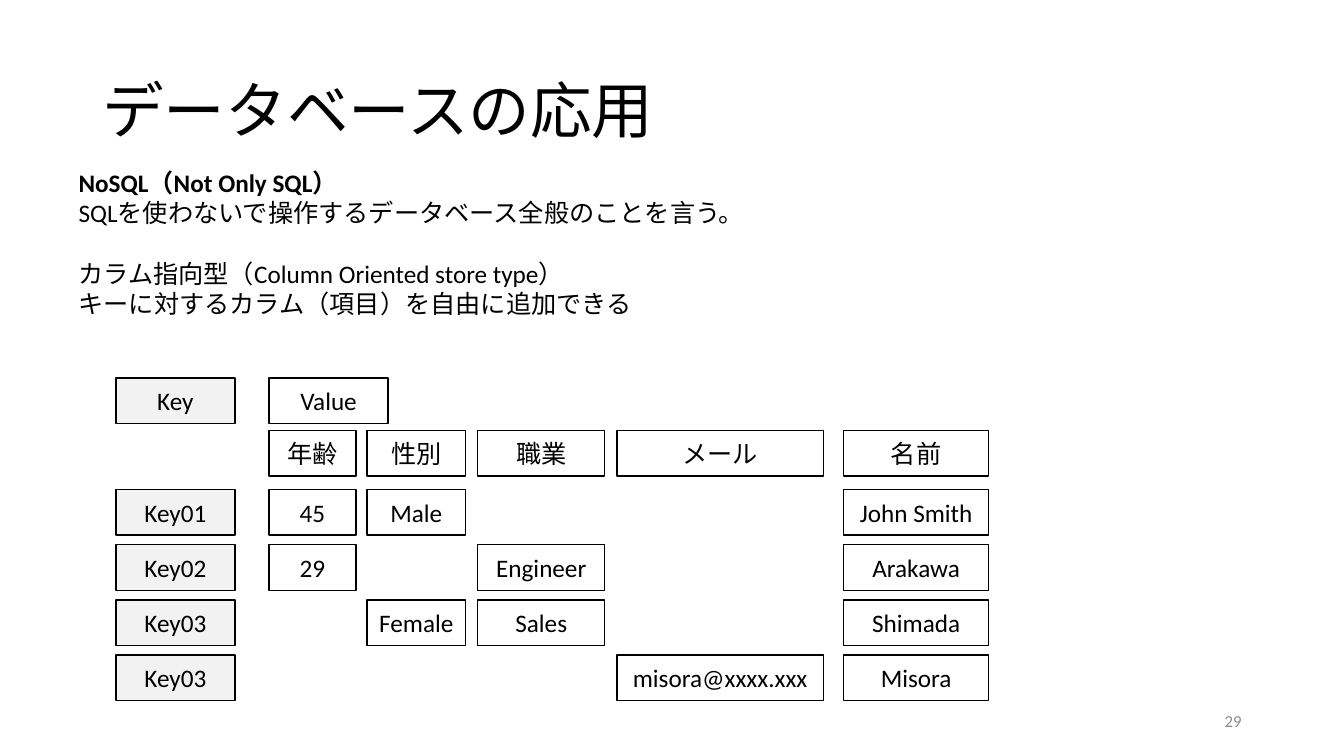
"""Build a slide on column-oriented NoSQL stores."""
import pptx
import pptx.dml.color
import pptx.enum.shapes
import pptx.enum.text
import pptx.util
from dataclasses import dataclass

Pt = pptx.util.Pt
Align = pptx.enum.text.PP_ALIGN
Anchor = pptx.enum.text.MSO_ANCHOR


@dataclass
class Theme:
    font: str = "Calibri"
    ink: str = "000000"
    muted: str = "8C8C8C"
    key_fill: str = "F2F2F2"
    value_fill: str = "FFFFFF"
    title_size: int = 44
    body_size: int = 18
    number_size: int = 12


theme = Theme()


def write(frame, text, *, size=theme.body_size, color=theme.ink, bold=False,
          align=Align.LEFT, anchor=Anchor.MIDDLE, line_spacing=None, gap_before=None):
    frame.word_wrap = True
    frame.vertical_anchor = anchor
    para = frame.add_paragraph() if frame.text else frame.paragraphs[0]
    para.alignment = align
    if line_spacing:
        para.line_spacing = line_spacing
    if gap_before:
        para.space_before = Pt(gap_before)
    span = para.add_run()
    span.text = text
    span.font.name = theme.font
    span.font.size = Pt(size)
    span.font.bold = bold
    span.font.color.rgb = pptx.dml.color.RGBColor.from_string(color)


def add_cell(page, text, left, top, width, fill):
    box = page.shapes.add_shape(pptx.enum.shapes.MSO_SHAPE.RECTANGLE,
                                Pt(left), Pt(top), Pt(width), Pt(32.6))
    box.shadow.inherit = False
    box.fill.solid()
    box.fill.fore_color.rgb = pptx.dml.color.RGBColor.from_string(fill)
    box.line.color.rgb = pptx.dml.color.RGBColor.from_string(theme.ink)
    box.line.width = Pt(1)
    write(box.text_frame, text, align=Align.CENTER)


deck = pptx.Presentation()
deck.slide_width, deck.slide_height = Pt(960), Pt(540)
page = deck.slides.add_slide(deck.slide_layouts[6])

title = page.shapes.add_textbox(Pt(66), Pt(28.8), Pt(828), Pt(104.4))
write(title.text_frame, "データベースの応用", size=theme.title_size, line_spacing=0.9)

number = page.shapes.add_textbox(Pt(678), Pt(500.5), Pt(216), Pt(28.8))
write(number.text_frame, "29", size=theme.number_size, color=theme.muted, align=Align.RIGHT)

body = page.shapes.add_textbox(Pt(49), Pt(115.9), Pt(863.3), Pt(116.6))
body_lines = [
    ("NoSQL（Not Only SQL）", True, None),
    ("SQLを使わないで操作するデータベース全般のことを言う。", False, None),
    ("カラム指向型（Column Oriented store type）", False, 22),
    ("キーに対するカラム（項目）を自由に追加できる", False, None),
]
for text, bold, gap in body_lines:
    write(body.text_frame, text, bold=bold, gap_before=gap, anchor=Anchor.TOP)

key_left, key_width = 82.8, 85
columns = [
    ("年齢", 192.2, 62),
    ("性別", 262.1, 70.6),
    ("職業", 341.3, 90.7),
    ("メール", 440.6, 147.6),
    ("名前", 602.6, 103.7),
]
records = [
    ("Key01", {"年齢": "45", "性別": "Male", "名前": "John Smith"}),
    ("Key02", {"年齢": "29", "職業": "Engineer", "名前": "Arakawa"}),
    ("Key03", {"性別": "Female", "職業": "Sales", "名前": "Shimada"}),
    ("Key03", {"メール": "misora@xxxx.xxx", "名前": "Misora"}),
]
legend_top, header_top, record_top, record_pitch = 270, 307.4, 349.7, 39.4

add_cell(page, "Key", key_left, legend_top, key_width, theme.key_fill)
add_cell(page, "Value", columns[0][1], legend_top, key_width, theme.value_fill)
for name, left, width in columns:
    add_cell(page, name, left, header_top, width, theme.value_fill)
for index, (key, values) in enumerate(records):
    top = record_top + index * record_pitch
    add_cell(page, key, key_left, top, key_width, theme.key_fill)
    for name, left, width in columns:
        if name in values:
            add_cell(page, values[name], left, top, width, theme.value_fill)

deck.save("out.pptx")
